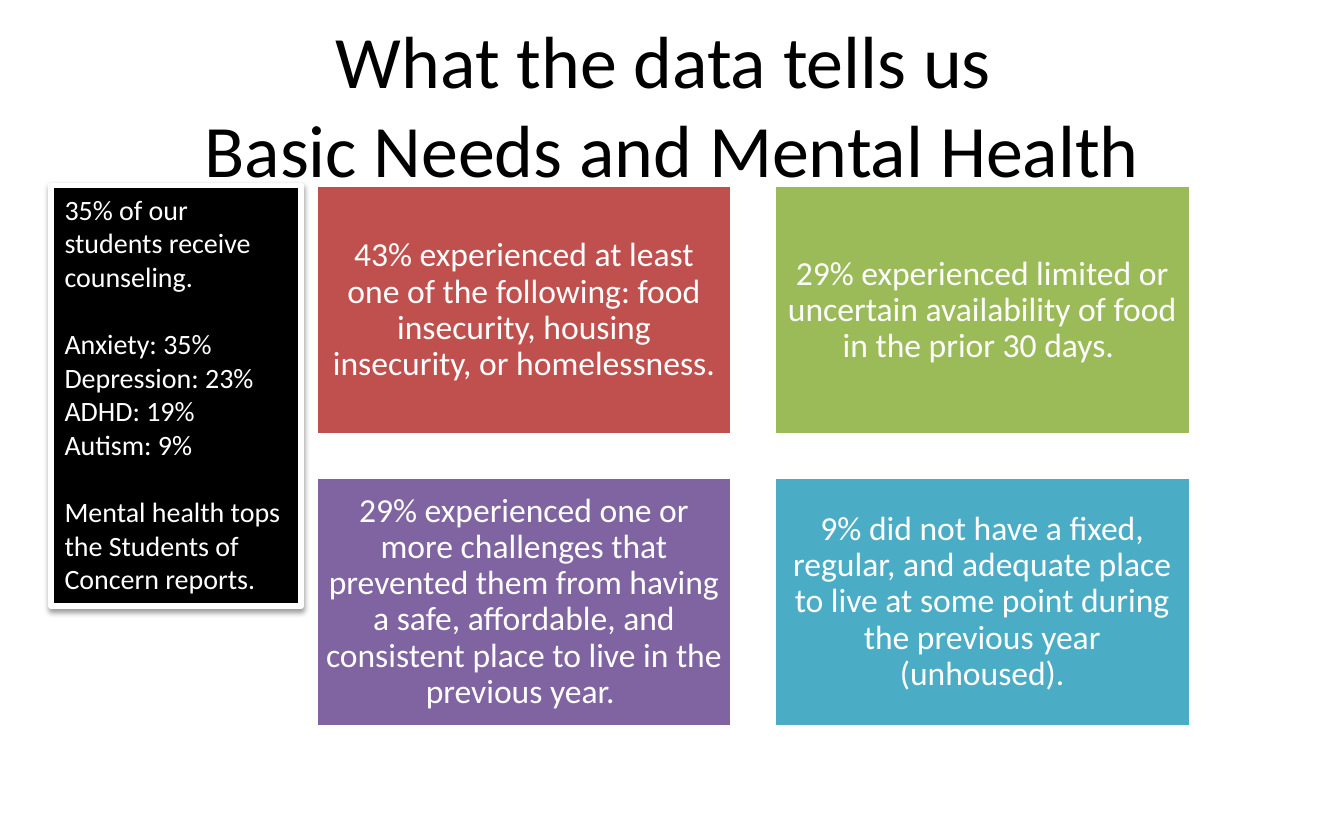
from typing import NamedTuple

from lxml import etree
from pptx import Presentation
from pptx import util as u
from pptx.dml.color import RGBColor
from pptx.enum import shapes, text
from pptx.oxml.ns import qn

FONT = "Calibri"
WHITE, BLACK = "FFFFFF", "000000"

# Grid of findings, in centimetres
GRID_LEFT, GRID_TOP = 5.97, 3.51
CARD_WIDTH, CARD_HEIGHT, GAP = 7.87, 4.72, 0.79
COLUMNS = 2


class Finding(NamedTuple):
    fill: str
    wording: str


class Line(NamedTuple):
    wording: str
    space_before: float = 0


FINDINGS = [
    Finding("C0504D", "43% experienced at least one of the following: food insecurity, "
                      "housing insecurity, or homelessness."),
    Finding("9BBB59", "29% experienced limited or uncertain availability of food "
                      "in the prior 30 days. "),
    Finding("8064A2", "29% experienced one or more challenges that prevented them from having "
                      "a safe, affordable, and consistent place to live in the previous year. "),
    Finding("4BACC6", "9% did not have a fixed, regular, and adequate place to live "
                      "at some point during the previous year (unhoused)."),
]

COUNSELING = [
    Line("35% of our students receive counseling."),
    Line("Anxiety: 35%", 18),
    Line("Depression: 23%"),
    Line("ADHD: 19%"),
    Line("Autism: 9%"),
    Line("Mental health tops the Students of Concern reports.", 18),
]


def color(value: str) -> RGBColor:
    return RGBColor.from_string(value)


def style(paragraph, size: float, ink: str, alignment) -> None:
    paragraph.alignment = alignment
    paragraph.font.name = FONT
    paragraph.font.size = u.Pt(size)
    paragraph.font.color.rgb = color(ink)


def add_box(slide, left: float, top: float, width: float, height: float,
            fill: str, border: float):
    shape = slide.shapes.add_shape(shapes.MSO_SHAPE.RECTANGLE, u.Cm(left), u.Cm(top),
                                   u.Cm(width), u.Cm(height))
    shape.shadow.inherit = False
    shape.fill.solid()
    shape.fill.fore_color.rgb = color(fill)
    shape.line.color.rgb = color(WHITE)
    shape.line.width = u.Pt(border)
    shape.text_frame.word_wrap = True
    return shape


def add_shadow(shape) -> None:
    effects = shape._element.spPr.find(qn("a:effectLst"))
    shadow = etree.SubElement(effects, qn("a:outerShdw"), blurRad=str(u.Pt(3.1)),
                              dist=str(u.Pt(1.6)), dir="5400000", rotWithShape="0")
    ink = etree.SubElement(shadow, qn("a:srgbClr"), val=BLACK)
    etree.SubElement(ink, qn("a:alpha"), val="38000")


def add_title(slide, wording: str) -> None:
    box = slide.shapes.add_textbox(u.Cm(1.27), u.Cm(0.64), u.Cm(22.86), u.Cm(2.64))
    frame = box.text_frame
    frame.word_wrap = True
    frame.vertical_anchor = text.MSO_ANCHOR.MIDDLE
    paragraph = frame.paragraphs[0]
    paragraph.text = wording
    style(paragraph, 39.6, BLACK, text.PP_ALIGN.CENTER)


def add_finding(slide, index: int, finding: Finding) -> None:
    row, column = divmod(index, COLUMNS)
    shape = add_box(slide, GRID_LEFT + column * (CARD_WIDTH + GAP),
                    GRID_TOP + row * (CARD_HEIGHT + GAP),
                    CARD_WIDTH, CARD_HEIGHT, finding.fill, 2)
    frame = shape.text_frame
    frame.margin_left = frame.margin_right = u.Cm(0.18)
    frame.margin_top = frame.margin_bottom = u.Cm(0.18)
    frame.vertical_anchor = text.MSO_ANCHOR.MIDDLE
    paragraph = frame.paragraphs[0]
    paragraph.text = finding.wording
    paragraph.line_spacing = 0.9
    style(paragraph, 18, WHITE, text.PP_ALIGN.CENTER)


def add_counseling(slide, lines: list[Line]) -> None:
    shape = add_box(slide, 0.97, GRID_TOP, 4.72, 7.95, BLACK, 3)
    add_shadow(shape)
    frame = shape.text_frame
    frame.vertical_anchor = text.MSO_ANCHOR.TOP
    for index, line in enumerate(lines):
        paragraph = frame.add_paragraph() if index else frame.paragraphs[0]
        paragraph.text = line.wording
        if line.space_before:
            paragraph.space_before = u.Pt(line.space_before)
        style(paragraph, 15, WHITE, text.PP_ALIGN.LEFT)


def main() -> None:
    presentation = Presentation()
    presentation.slide_width, presentation.slide_height = u.Cm(25.4), u.Cm(15.88)
    slide = presentation.slides.add_slide(presentation.slide_layouts[6])

    # Heading
    add_title(slide, "What the data tells us \vBasic Needs and Mental Health")

    # Basic needs findings
    for index, finding in enumerate(FINDINGS):
        add_finding(slide, index, finding)

    # Mental health panel
    add_counseling(slide, COUNSELING)

    presentation.save("out.pptx")


if __name__ == "__main__":
    main()
